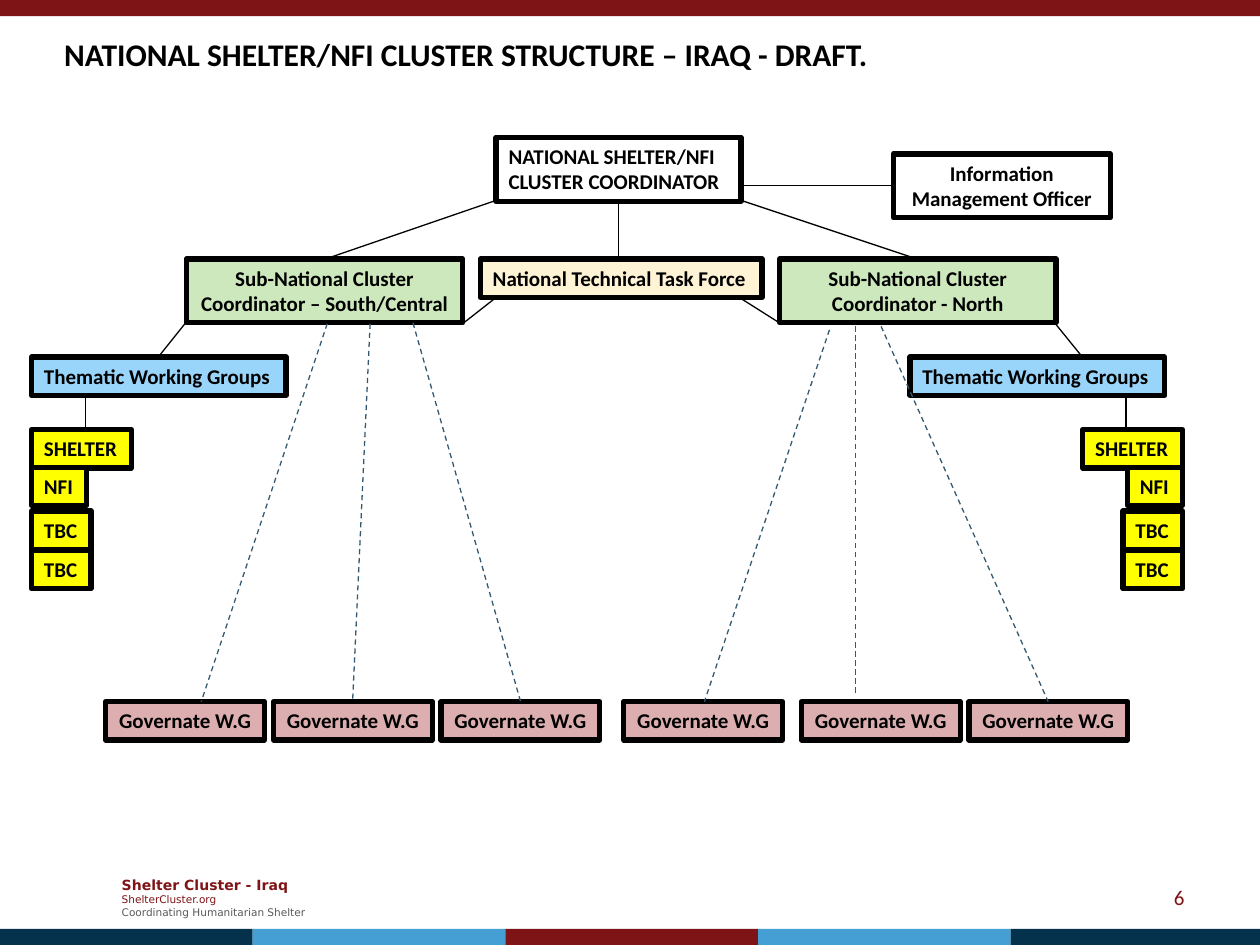
from pptx import Presentation
from pptx import util as u
from pptx.dml.color import RGBColor
from pptx.enum import dml, shapes, text
from pptx.oxml import ns
from lxml import etree

BLACK = RGBColor(0x00, 0x00, 0x00)
RED = RGBColor(0x7F, 0x14, 0x16)
NAVY = RGBColor(0x04, 0x31, 0x4C)
BLUE = RGBColor(0x45, 0x9F, 0xD5)
GRAY = RGBColor(0x59, 0x59, 0x59)
SLATE = RGBColor(0x33, 0x58, 0x6F)
GREEN = RGBColor(0xCE, 0xE8, 0xBD)
CREAM = RGBColor(0xFF, 0xF3, 0xD6)
SKY = RGBColor(0x99, 0xD5, 0xFA)
YELLOW = RGBColor(0xFF, 0xFF, 0x00)
PINK = RGBColor(0xDC, 0xAE, 0xAF)

LEFT, MID, RIGHT = text.PP_ALIGN.LEFT, text.PP_ALIGN.CENTER, text.PP_ALIGN.RIGHT
TOP, CENTER = text.MSO_ANCHOR.TOP, text.MSO_ANCHOR.MIDDLE
LOW = 22


def style(item, **vals):
    """Set each given attribute on the item."""
    for key, val in vals.items():
        setattr(item, key, val)


def write(frame, lines, align=LEFT, anchor=TOP):
    """Fill a frame with (text, size, colour, bold, font) lines."""
    style(frame, word_wrap=True, auto_size=text.MSO_AUTO_SIZE.NONE,
          vertical_anchor=anchor, margin_left=u.Pt(7.2),
          margin_right=u.Pt(7.2), margin_top=u.Pt(3.6),
          margin_bottom=u.Pt(3.6))
    for num, (words, size, color, bold, face) in enumerate(lines):
        para = frame.add_paragraph() if num else frame.paragraphs[0]
        para.alignment = align
        run = para.add_run()
        run.text = words
        style(run.font, size=u.Pt(size), bold=bold, name=face)
        run.font.color.rgb = color


def rect(slide, spot, fill=None):
    """Add a plain rectangle without line or shadow."""
    shape = slide.shapes.add_shape(shapes.MSO_SHAPE.RECTANGLE, *map(u.Pt, spot))
    shape.shadow.inherit = False
    shape.line.fill.background()
    if fill is None:
        shape.fill.background()
    else:
        shape.fill.solid()
        shape.fill.fore_color.rgb = fill
    return shape


def box(slide, spot, words, fill=None, align=LEFT):
    """Add a framed chart box with bold text."""
    shape = rect(slide, spot, fill)
    shape.line.color.rgb = BLACK
    shape.line.width = u.Pt(3)
    lines = [(line, 12, BLACK, True, "Calibri") for line in words.split("\n")]
    write(shape.text_frame, lines, align)
    edge = 7.2 if align == LEFT else 3
    style(shape.text_frame, margin_left=u.Pt(edge), margin_right=u.Pt(0 if align == LEFT else edge))


def link(slide, ends, color=BLACK, dash=False):
    """Join two points with a thin line."""
    line = slide.shapes.add_connector(shapes.MSO_CONNECTOR.STRAIGHT, *map(u.Pt, ends))
    line.line.color.rgb = color
    line.line.width = u.Pt(0.75)
    if dash:
        line.line.dash_style = dml.MSO_LINE.DASH
    etree.SubElement(line._element.spPr, ns.qn("a:effectLst"))


def label(slide, spot, lines, align=LEFT):
    """Add a vertically centred text box."""
    area = slide.shapes.add_textbox(*map(u.Pt, spot))
    write(area.text_frame, lines, align, CENTER)


def trim(slide):
    """Add the colour bands, footer, page number and title."""
    rect(slide, (0, 0, 720, 9.2), RED)
    for num, color in enumerate((NAVY, BLUE, RED, BLUE, NAVY)):
        rect(slide, (num * 144.4, 530.8, min(144.4, 720 - num * 144.4), 9.2), color)
    label(slide, (62.5, 497, 124.5, 31.5), [
        ("Shelter Cluster - Iraq", 8, RED, True, "DejaVu Sans"),
        ("ShelterCluster.org", 6, RED, False, "DejaVu Sans"),
        ("Coordinating Humanitarian Shelter", 6, GRAY, False, "DejaVu Sans")])
    label(slide, (516, 498, 168, 29), [("6", 12, RED, False, "Calibri")], RIGHT)
    head = slide.shapes.title
    style(head, left=u.Pt(29.5), top=u.Pt(16.5), width=u.Pt(631), height=u.Pt(29))
    write(head.text_frame, [("NATIONAL SHELTER/NFI CLUSTER STRUCTURE – IRAQ - DRAFT.",
                             18, BLACK, True, "Calibri")])


def tree(slide):
    """Draw the links and boxes of the cluster structure."""
    for ends in ((353.5, 114.5, 353.5, 148), (423.5, 114.5, 524, 148),
                 (186, 148, 283.5, 114.5), (108.5, 181.5, 90.5, 204),
                 (49, 227, 49, 247), (603.5, 185.5, 618.5, 204),
                 (643.5, 227, 643.5, 245.5), (283.5, 170, 265, 184.5),
                 (447, 185.5, 422.5, 170), (422.5, 106, 510.5, 106)):
        link(slide, ends)
    box(slide, (283.5, 78.5, 140, 36.5), "NATIONAL SHELTER/NFI\nCLUSTER COORDINATOR")
    box(slide, (510.5, 88, 124, 36.5), "Information Management Officer", align=MID)
    box(slide, (274.5, 148, 161, LOW), "National Technical Task Force", CREAM)
    for left, area in ((106.5, "– South/Central"), (445.5, "- North")):
        box(slide, (left, 148, 158, 36.5),
            f"Sub-National Cluster\nCoordinator {area}", GREEN, MID)
    for left in (18, 520):
        box(slide, (left, 204, 145.5, LOW), "Thematic Working Groups", SKY)
    for words, top, wide in (("SHELTER", 245.5, 57), ("NFI", 267, 31.5),
                             ("TBC", 292, 34), ("TBC", 314.5, 34)):
        for left in (18, 675.7 - wide):
            box(slide, (left, top, wide, LOW), words, YELLOW)
    for left, start, top, end, base in (
            (60.5, 187, 185, 115, 401), (156.3, 211.5, 185, 201.5, 401),
            (252, 236, 184.5, 297.5, 401), (356.5, 474, 188.5, 402.5, 401),
            (458, 489, 186.5, 489, 398), (553.7, 503.5, 186.5, 599, 401)):
        box(slide, (left, 401, 90.7, LOW), "Governate W.G", PINK, MID)
        link(slide, (start, top, end, base), SLATE, True)


def main():
    """Build and save the slide."""
    deck = Presentation()
    style(deck, slide_width=u.Pt(720), slide_height=u.Pt(540))
    slide = deck.slides.add_slide(deck.slide_layouts[5])
    trim(slide)
    tree(slide)
    deck.save("out.pptx")


if __name__ == "__main__":
    main()
